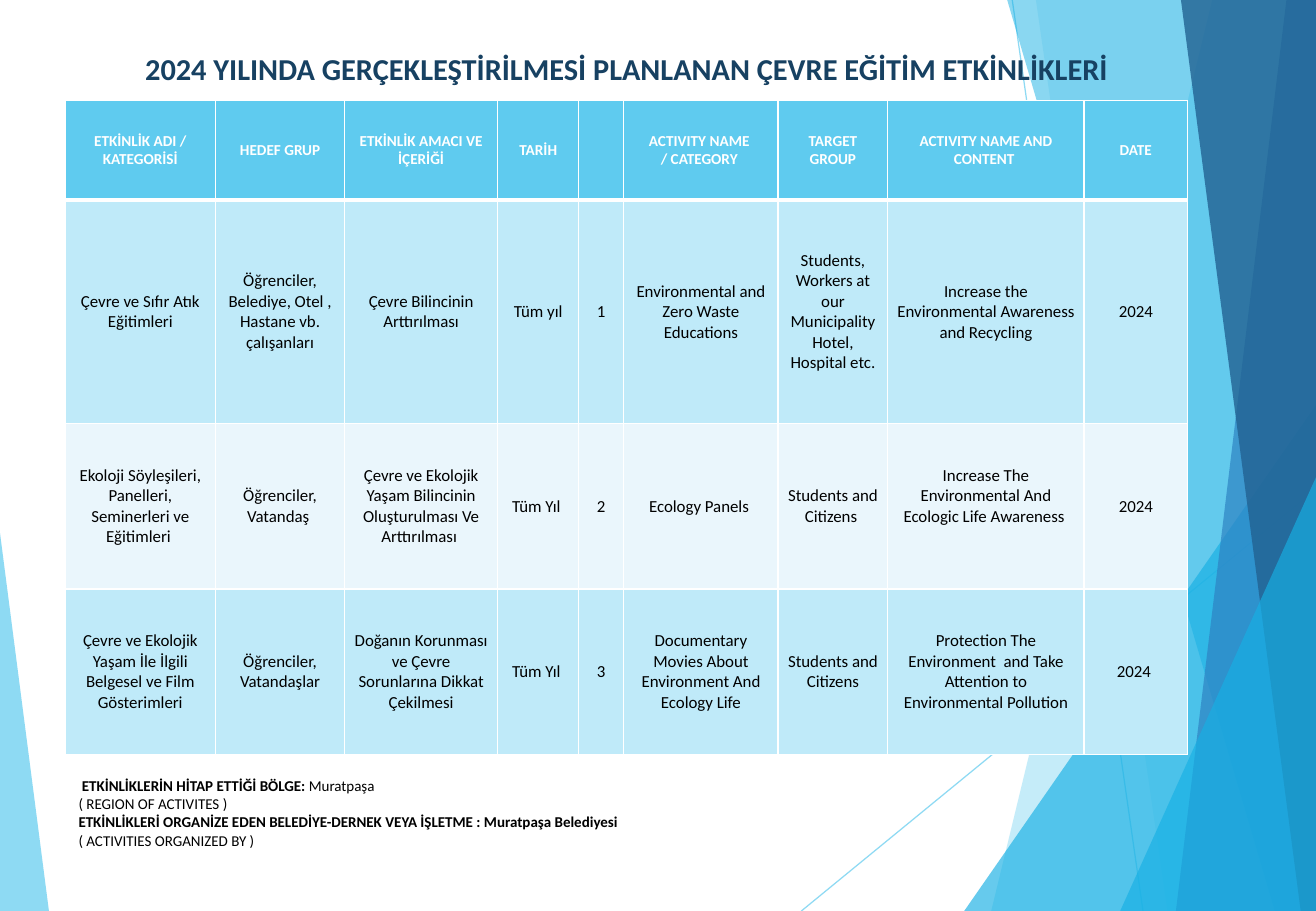
from lxml import etree
from pptx import Presentation
from pptx.dml.color import RGBColor
from pptx.enum.shapes import MSO_CONNECTOR, MSO_SHAPE
from pptx.enum.text import MSO_ANCHOR, MSO_AUTO_SIZE, PP_ALIGN
from pptx.oxml.ns import qn
from pptx.util import Pt

STRAIGHT = MSO_CONNECTOR.STRAIGHT
TRIANGLE = MSO_SHAPE.ISOSCELES_TRIANGLE
MIDDLE, TOP = MSO_ANCHOR.MIDDLE, MSO_ANCHOR.TOP
LEFT, CENTER = PP_ALIGN.LEFT, PP_ALIGN.CENTER
NO_AUTOFIT = MSO_AUTO_SIZE.NONE

WIDTH, HEIGHT = 780, 540
TITLE_ONLY = 5
FONT = "Calibri"
COLORS = {
    "sky": "5FCBEF", "cyan": "17B0E4", "blue": "2E83C3", "navy": "226292",
    "title": "174162", "text": "000000", "white": "FFFFFF",
    "band_dark": "BFEAF9", "band_light": "EAF6FC",
}

LINES = [(600, 0, 677.5, HEIGHT), (WIDTH, 290, 475, HEIGHT)]
# Each band runs from a top corner and a bottom corner to the right edge.
BANDS_BACK = [(718.5, 587.5, "sky", 36), (614, 692, "sky", 20)]
BANDS_FRONT = [(597, 755.5, "cyan", 50), (762.5, 697, "blue", 70), (700, 771, "navy", 80)]

TITLE = "2024 YILINDA GERÇEKLEŞTİRİLMESİ PLANLANAN ÇEVRE EĞİTİM ETKİNLİKLERİ"
FOOTER = [
    [(" ETKİNLİKLERİN HİTAP ETTİĞİ BÖLGE: ", True), ("Muratpaşa", False)],
    [("( REGION OF ACTIVITES )", False)],
    [("ETKİNLİKLERİ ORGANİZE EDEN BELEDİYE-DERNEK VEYA İŞLETME : Muratpaşa Belediyesi", True)],
    [("( ACTIVITIES ORGANIZED BY )", False)],
]

COLUMN_WIDTHS = [89.3, 76.4, 90.8, 48.1, 26.6, 91.6, 64.9, 116.5, 61.2]
ROW_HEIGHTS = [59, 132.5, 98, 98]
ACTIVITIES = [
    ["ETKİNLİK ADI / KATEGORİSİ", "HEDEF GRUP", "ETKİNLİK AMACI VE İÇERİĞİ", "TARİH", "",
     "ACTIVITY NAME \n/ CATEGORY ", "TARGET GROUP", "ACTIVITY NAME AND CONTENT ", " DATE "],
    ["Çevre ve Sıfır Atık Eğitimleri", "Öğrenciler, Belediye, Otel , Hastane vb. çalışanları",
     "Çevre Bilincinin Arttırılması", "Tüm yıl", "1",
     "Environmental and Zero Waste\n Educations ",
     "Students, Workers at our Municipality Hotel, Hospital etc.",
     "Increase the Environmental Awareness and Recycling", "2024"],
    ["Ekoloji Söyleşileri, Panelleri, Seminerleri ve Eğitimleri ", "Öğrenciler, Vatandaş ",
     "Çevre ve Ekolojik Yaşam Bilincinin Oluşturulması Ve Arttırılması ", "Tüm Yıl ", "2",
     "Ecology Panels ", "Students and Citizens ",
     "Increase The Environmental And Ecologic Life Awareness ", "2024"],
    ["Çevre ve Ekolojik Yaşam İle İlgili Belgesel ve Film Gösterimleri",
     "Öğrenciler, Vatandaşlar", "Doğanın Korunması ve Çevre Sorunlarına Dikkat Çekilmesi",
     "Tüm Yıl ", "3", "Documentary Movies About Environment And Ecology Life",
     "Students and Citizens",
     "Protection The Environment  and Take Attention to Environmental Pollution", "2024 "],
]
RAISED_CELL = (2, 7)


def rgb(name):
    """Return the named colour."""
    return RGBColor.from_string(COLORS[name])


def set_opacity(shape, percent):
    """Apply an opacity to the explicit colours of a shape."""
    for color in shape.element.iter(qn("a:srgbClr")):
        etree.SubElement(color, qn("a:alpha"), val=str(percent * 1000))


def write_text(frame, paragraphs, size, color="text", align=LEFT):
    """Fill a text frame with paragraphs made of (text, bold) runs."""
    for index, runs in enumerate(paragraphs):
        paragraph = frame.add_paragraph() if index else frame.paragraphs[0]
        paragraph.alignment = align
        for text, bold in runs:
            run = paragraph.add_run()
            run.text = text
            run.font.name = FONT
            run.font.size = Pt(size)
            run.font.bold = bold
            run.font.color.rgb = rgb(color)


def paint(shape, color, opacity):
    """Give a shape a translucent fill without outline or shadow."""
    shape.shadow.inherit = False
    shape.fill.solid()
    shape.fill.fore_color.rgb = rgb(color)
    shape.line.fill.background()
    set_opacity(shape, opacity)


def add_line(slide, x1, y1, x2, y2):
    """Add a thin translucent line."""
    line = slide.shapes.add_connector(STRAIGHT, Pt(x1), Pt(y1), Pt(x2), Pt(y2))
    line.line.color.rgb = rgb("sky")
    line.line.width = Pt(0.75)
    set_opacity(line, 70)
    etree.SubElement(line.element.spPr, qn("a:effectLst"))


def add_band(slide, top_x, bottom_x, color, opacity):
    """Add a slanted band that reaches the right edge of the slide."""
    builder = slide.shapes.build_freeform(Pt(top_x), Pt(0))
    corners = [(WIDTH, 0), (WIDTH, HEIGHT), (bottom_x, HEIGHT)]
    builder.add_line_segments([(Pt(x), Pt(y)) for x, y in corners])
    paint(builder.convert_to_shape(), color, opacity)


def add_triangle(slide, left, top, width, apex, color, opacity):
    """Add a triangle that stands on the bottom edge of the slide."""
    triangle = slide.shapes.add_shape(
        TRIANGLE, Pt(left), Pt(top), Pt(width), Pt(HEIGHT - top))
    triangle.adjustments[0] = apex
    paint(triangle, color, opacity)


def add_decoration(slide):
    """Add the faceted background."""
    for line in LINES:
        add_line(slide, *line)
    for band in BANDS_BACK:
        add_band(slide, *band)
    add_triangle(slide, 571.5, 240, 208.5, 1, "cyan", 66)
    for band in BANDS_FRONT:
        add_band(slide, *band)
    add_triangle(slide, 664, 283, 116, 1, "cyan", 66)
    add_triangle(slide, 0, 316, 29, 0, "sky", 70)


def place_title(slide):
    """Format the title placeholder and bring it in front of the background."""
    title = slide.shapes.title
    title.left, title.top, title.width, title.height = Pt(42), Pt(25), Pt(659), Pt(34.5)
    title.element.getparent().append(title.element)
    frame = title.text_frame
    frame.auto_size = NO_AUTOFIT
    frame.vertical_anchor = MIDDLE
    frame.margin_top, frame.margin_bottom = 0, Pt(4)
    write_text(frame, [[(TITLE, True)]], 18, "title", CENTER)


def add_footer(slide):
    """Add the region and organizer note."""
    box = slide.shapes.add_textbox(Pt(39.5), Pt(457), Pt(667.5), Pt(50.5))
    box.text_frame.word_wrap = True
    box.text_frame.vertical_anchor = TOP
    write_text(box.text_frame, FOOTER, 8.9)


def set_borders(cell, top, bottom):
    """Draw white cell borders with the given top and bottom widths."""
    properties = cell._tc.get_or_add_tcPr()
    for side, width in (("L", 1), ("R", 1), ("T", top), ("B", bottom)):
        border = etree.SubElement(properties, qn(f"a:ln{side}"), w=str(Pt(width)))
        fill = etree.SubElement(border, qn("a:solidFill"))
        etree.SubElement(fill, qn("a:srgbClr"), val=COLORS["white"])


def format_cell(cell, text, row):
    """Fill one table cell according to its row."""
    header = row == 0
    set_borders(cell, 3 if row == 1 else 1, 3 if header else 1)
    cell.fill.solid()
    band = "band_dark" if row % 2 else "band_light"
    cell.fill.fore_color.rgb = rgb("sky" if header else band)
    cell.vertical_anchor = MIDDLE
    cell.margin_left = cell.margin_right = Pt(5)
    cell.margin_top = cell.margin_bottom = Pt(2.7)
    if text:
        paragraphs = [[(line, header)] for line in text.split("\n")]
        write_text(cell.text_frame, paragraphs, 9 if header else 10,
                   "white" if header else "text", CENTER)


def add_activity_table(slide):
    """Add the bilingual table of planned activities."""
    table = slide.shapes.add_table(
        len(ROW_HEIGHTS), len(COLUMN_WIDTHS), Pt(38.5), Pt(59.6),
        Pt(sum(COLUMN_WIDTHS)), Pt(sum(ROW_HEIGHTS))).table
    for column, width in zip(table.columns, COLUMN_WIDTHS):
        column.width = Pt(width)
    for row, height in zip(table.rows, ROW_HEIGHTS):
        row.height = Pt(height)
    for row, texts in enumerate(ACTIVITIES):
        for column, text in enumerate(texts):
            format_cell(table.cell(row, column), text, row)
    table.cell(*RAISED_CELL).margin_bottom = Pt(15)


def main():
    """Build the slide and save the presentation."""
    presentation = Presentation()
    presentation.slide_width, presentation.slide_height = Pt(WIDTH), Pt(HEIGHT)
    slide = presentation.slides.add_slide(presentation.slide_layouts[TITLE_ONLY])
    add_decoration(slide)
    place_title(slide)
    add_footer(slide)
    add_activity_table(slide)
    presentation.save("out.pptx")


if __name__ == "__main__":
    main()
